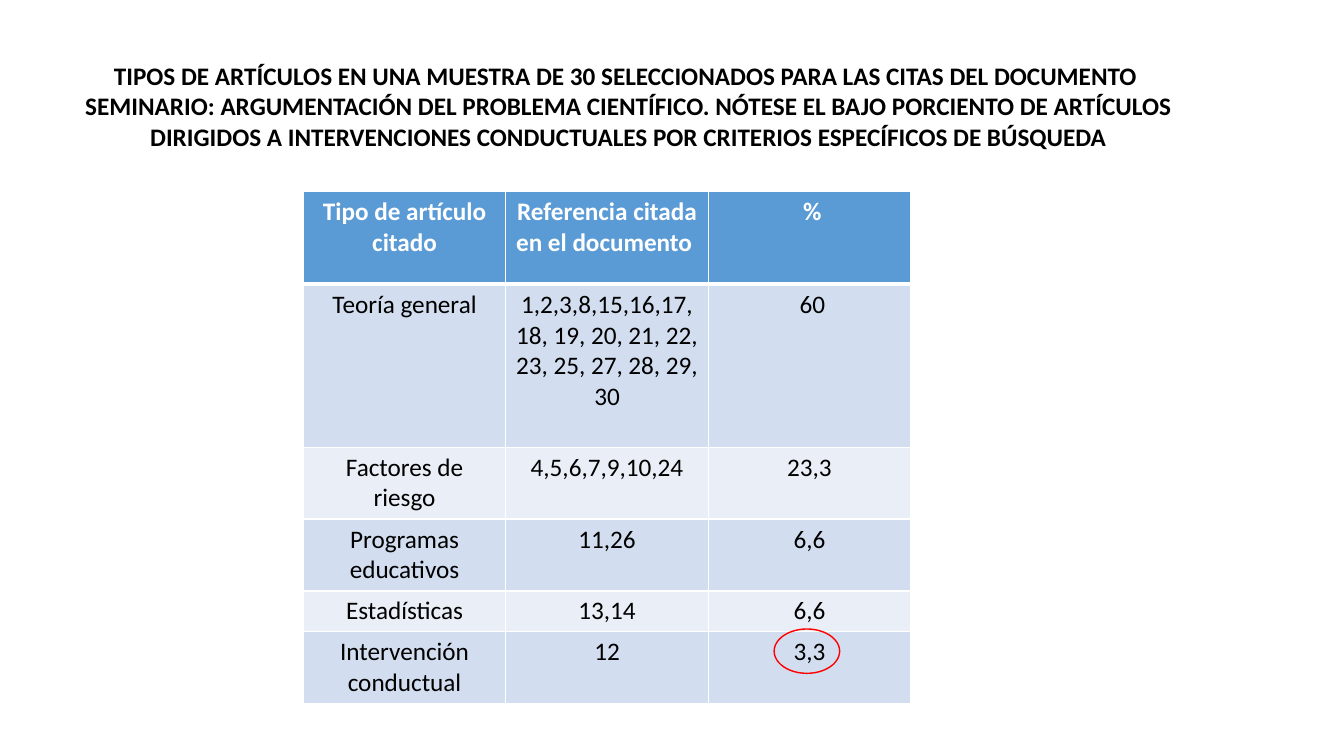
from typing import NamedTuple

from lxml import etree
from pptx import Presentation, util as u
from pptx.dml.color import RGBColor
from pptx.enum import shapes, text
from pptx.oxml.ns import qn

# The slide is a grid of 160 columns by 90 rows of square units.
UNIT = u.Inches(7.5) / 90
FONT = "Calibri"
WHITE, BLACK, RED = "FFFFFF", "000000", "FF0000"
HEAD, BANDS = "5B9BD5", ("D2DEEF", "EAEFF7")


class Box(NamedTuple):
    col: float
    row: float
    wide: float
    high: float


class Line(NamedTuple):
    kind: str
    refs: str
    share: str
    high: float


TITLE = (
    "TIPOS DE ARTÍCULOS EN UNA MUESTRA DE 30 SELECCIONADOS PARA LAS CITAS DEL DOCUMENTO ",
    "SEMINARIO: ARGUMENTACIÓN DEL PROBLEMA CIENTÍFICO. NÓTESE EL BAJO PORCIENTO DE "
    "ARTÍCULOS DIRIGIDOS A INTERVENCIONES CONDUCTUALES POR CRITERIOS ESPECÍFICOS DE BÚSQUEDA",
)
LINES = (
    Line("Tipo de artículo citado", "Referencia citada en el documento ", " %", 11.04),
    Line("Teoría general", "1,2,3,8,15,16,17, 18, 19, 20, 21, 22, 23, 25, 27, 28, 29, 30",
         " 60", 19.4),
    Line("Factores de riesgo", "4,5,6,7,9,10,24", "23,3", 8.56),
    Line("Programas educativos", "11,26", "6,6", 8.56),
    Line("Estadísticas", "13,14", "6,6", 4.85),
    Line("Intervención conductual", "12", "3,3", 8.56),
)
TITLE_BOX = Box(7.44, 6.6, 134.76, 12.12)
TABLE_BOX = Box(36.12, 22.8, 72.3, sum(line.high for line in LINES))
RING_BOX = Box(92.16, 74.88, 7.8, 5.28)


def size(units: float) -> int:
    return u.Emu(round(units * UNIT))


def place(box: Box) -> tuple:
    return tuple(size(part) for part in box)


def color(code: str) -> RGBColor:
    return RGBColor.from_string(code)


def style(para, ink: str, bold: bool) -> None:
    para.alignment = text.PP_ALIGN.CENTER
    font = para.font
    font.name, font.size, font.bold = FONT, u.Pt(18), bold
    font.color.rgb = color(ink)


def edge(cell, top: int, base: int) -> None:
    """Draw white cell borders; top and base are widths in points."""
    props = cell._tc.get_or_add_tcPr()
    widths = {"a:lnL": 1, "a:lnR": 1, "a:lnT": top, "a:lnB": base}
    for spot, (tag, width) in enumerate(widths.items()):
        line = etree.Element(qn(tag), w=str(u.Pt(width)))
        fill = etree.SubElement(line, qn("a:solidFill"))
        etree.SubElement(fill, qn("a:srgbClr"), val=WHITE)
        props.insert(spot, line)


def add_title(slide) -> None:
    title = slide.shapes.title
    title.left, title.top, title.width, title.height = place(TITLE_BOX)
    frame = title.text_frame
    frame.text = "\n".join(TITLE)
    frame.word_wrap = True
    frame.auto_size = text.MSO_AUTO_SIZE.NONE
    frame.vertical_anchor = text.MSO_ANCHOR.TOP
    for para in frame.paragraphs:
        style(para, BLACK, True)
        para.line_spacing = 1.0
        para.space_before = u.Pt(0)


def add_grid(slide) -> None:
    table = slide.shapes.add_table(len(LINES), 3, *place(TABLE_BOX)).table
    for row, line in enumerate(LINES):
        table.rows[row].height = size(line.high)
        head = row == 0
        for col, words in enumerate((line.kind, line.refs, line.share)):
            cell = table.cell(row, col)
            cell.text = words
            style(cell.text_frame.paragraphs[0], WHITE if head else BLACK, head)
            cell.fill.solid()
            cell.fill.fore_color.rgb = color(HEAD if head else BANDS[(row - 1) % 2])
            edge(cell, 3 if row == 1 else 1, 3 if head else 1)


def add_ring(slide) -> None:
    ring = slide.shapes.add_shape(shapes.MSO_SHAPE.OVAL, *place(RING_BOX))
    ring.shadow.inherit = False
    ring.fill.background()
    ring.line.color.rgb = color(RED)
    ring.line.width = u.Pt(1)


def main() -> None:
    deck = Presentation()
    deck.slide_width, deck.slide_height = size(160), size(90)
    slide = deck.slides.add_slide(deck.slide_layouts.get_by_name("Title Only"))
    add_title(slide)
    add_grid(slide)
    add_ring(slide)
    deck.save("out.pptx")


if __name__ == "__main__":
    main()
